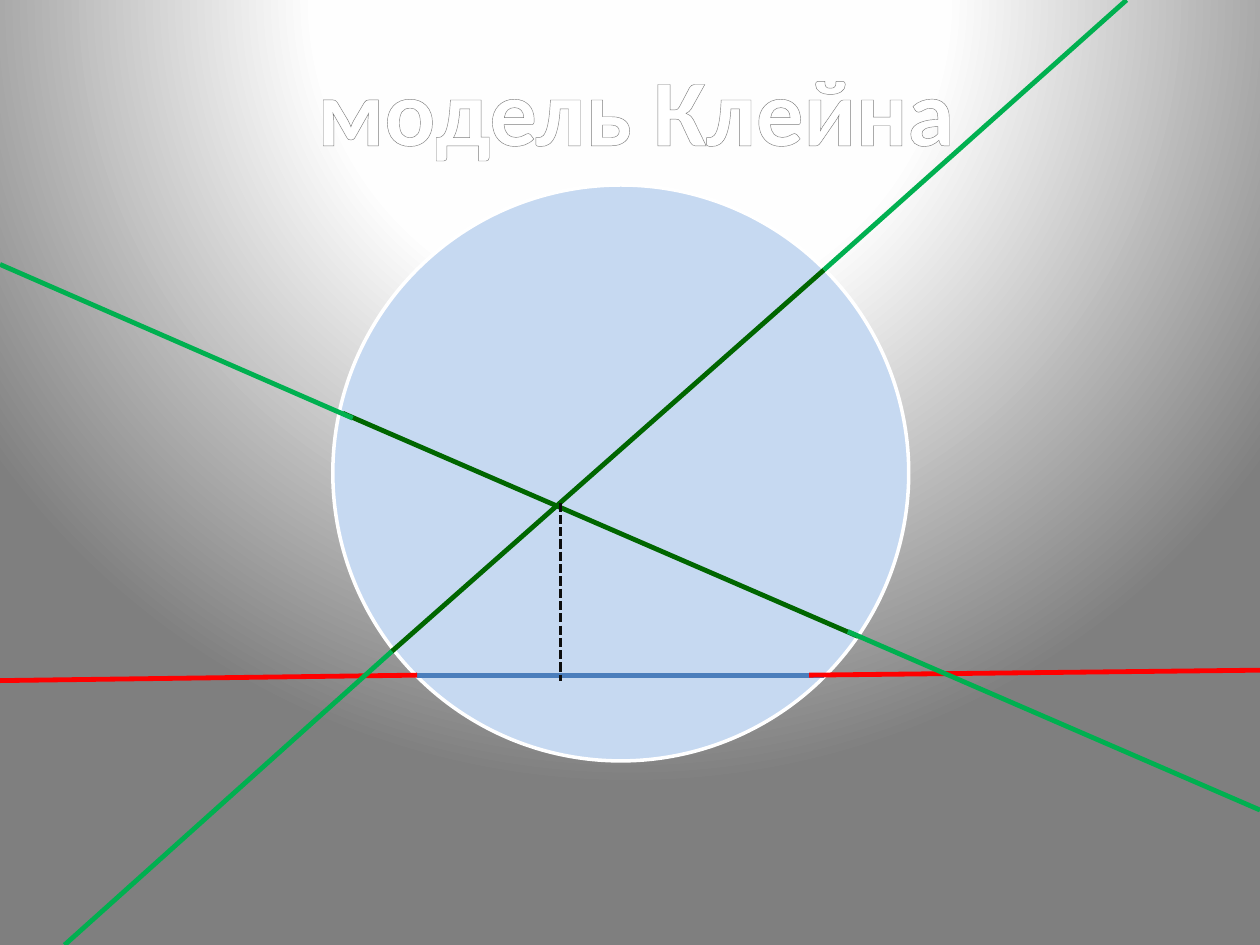
"""Build the slide on the Klein model: a disc, its chords and their extensions."""
from dataclasses import dataclass

from pptx import Presentation
from pptx import oxml
from pptx import util as u
from pptx.dml.color import RGBColor
from pptx.enum import dml, shapes, text
from pptx.oxml import ns
from pptx.slide import Slide

WHITE = RGBColor(0xFF, 0xFF, 0xFF)
NEAR_WHITE = RGBColor(0xFE, 0xFE, 0xFE)
GREY = RGBColor(0x7F, 0x7F, 0x7F)
OUTLINE_GREY = RGBColor(0x7D, 0x7D, 0x7D)
PALE_BLUE = RGBColor(0xC6, 0xD9, 0xF1)
BLUE = RGBColor(0x4B, 0x7E, 0xBC)
DARK_GREEN = RGBColor(0x00, 0x66, 0x00)
GREEN = RGBColor(0x00, 0xB0, 0x50)
RED = RGBColor(0xFF, 0x00, 0x00)
BLACK = RGBColor(0x0D, 0x0D, 0x0D)

Point = tuple[float, float]
Stops = list[tuple[int, RGBColor]]

WIDTH, HEIGHT = 25.4, 19.05
CHORD_LEFT, CHORD_RIGHT = (8.41, 13.61), (16.61, 13.61)
RISING_LOW, RISING_HIGH = (7.9, 13.13), (16.61, 5.44)


@dataclass(frozen=True)
class Segment:
    start: Point
    end: Point
    color: RGBColor
    width: float = 2.75
    dash: dml.MSO_LINE | None = None


SEGMENTS = [
    Segment(CHORD_LEFT, CHORD_RIGHT, BLUE),
    Segment(RISING_LOW, RISING_HIGH, DARK_GREEN),
    Segment((17.3, 12.83), (6.91, 8.33), DARK_GREEN),
    Segment(CHORD_LEFT, (0, 13.72), RED),
    Segment((WIDTH, 13.51), (16.31, 13.61), RED),
    Segment((7.11, 8.43), (0, 5.33), GREEN),
    Segment((WIDTH, 16.33), (17.09, 12.73), GREEN),
    Segment(RISING_HIGH, (22.71, 0), GREEN),
    Segment((1.3, HEIGHT), RISING_LOW, GREEN),
    Segment((11.3, 10.13), (11.3, 13.72), BLACK, 1.75, dml.MSO_LINE.SQUARE_DOT),
]


def gradient(stops: Stops, shade: str) -> oxml.xmlchemy.BaseOxmlElement:
    """Return a gradient fill element with the given stops and shading."""
    marks = "".join(
        f'<a:gs pos="{percent * 1000}"><a:srgbClr val="{color}"/></a:gs>'
        for percent, color in stops
    )
    return oxml.parse_xml(
        f'<a:gradFill {ns.nsdecls("a")} rotWithShape="1">'
        f"<a:gsLst>{marks}</a:gsLst>{shade}</a:gradFill>"
    )


def paint_background(page: Slide) -> None:
    """Fill the page with a glow centred above its top edge."""
    page.background.fill.solid()
    properties = page.element.xpath(".//p:bgPr")[0]
    glow = gradient(
        [(0, WHITE), (40, NEAR_WHITE), (100, GREY)],
        '<a:path path="circle">'
        '<a:fillToRect l="50000" t="-80000" r="50000" b="180000"/></a:path>',
    )
    properties.replace(properties[0], glow)


def draw_disc(page: Slide, left: float, top: float, size: float) -> None:
    """Draw the disc that bounds the model."""
    disc = page.shapes.add_shape(
        shapes.MSO_SHAPE.OVAL, u.Cm(left), u.Cm(top), u.Cm(size), u.Cm(size)
    )
    disc.shadow.inherit = False
    disc.fill.solid()
    disc.fill.fore_color.rgb = PALE_BLUE
    disc.line.color.rgb = WHITE
    disc.line.width = u.Pt(2)


def draw_segment(page: Slide, segment: Segment) -> None:
    """Draw one straight segment without a shadow."""
    ends = [u.Cm(value) for value in (*segment.start, *segment.end)]
    line = page.shapes.add_connector(shapes.MSO_CONNECTOR.STRAIGHT, *ends)
    line.line.color.rgb = segment.color
    line.line.width = u.Pt(segment.width)
    if segment.dash is not None:
        line.line.dash_style = segment.dash
    line.element.spPr.append(oxml.parse_xml(f'<a:effectLst {ns.nsdecls("a")}/>'))


def add_text(
    page: Slide,
    wording: str,
    *,
    place: tuple[float, float, float, float],
    size: float,
    font: str,
    stops: Stops,
    outline: RGBColor,
    outline_width: float,
) -> None:
    """Add a centred bold line of outlined text with a gradient fill."""
    box = page.shapes.add_textbox(*(u.Cm(value) for value in place))
    frame = box.text_frame
    frame.word_wrap = False
    frame.auto_size = text.MSO_AUTO_SIZE.SHAPE_TO_FIT_TEXT
    para = frame.paragraphs[0]
    para.alignment = text.PP_ALIGN.CENTER
    span = para.add_run()
    span.text = wording
    span.font.size = u.Pt(size)
    span.font.bold = True
    span.font.name = font
    properties = para.runs[0].font._element
    border = oxml.parse_xml(
        f'<a:ln {ns.nsdecls("a")} w="{int(u.Pt(outline_width))}"><a:solidFill>'
        f'<a:srgbClr val="{outline}"/></a:solidFill></a:ln>'
    )
    properties.insert(0, border)
    properties.insert(1, gradient(stops, '<a:lin ang="5400000" scaled="0"/>'))


def main() -> None:
    """Build and save the deck."""
    deck = Presentation()
    deck.slide_width, deck.slide_height = u.Cm(WIDTH), u.Cm(HEIGHT)
    page = deck.slides.add_slide(deck.slide_layouts[6])
    paint_background(page)
    draw_disc(page, left=6.71, top=3.73, size=11.61)
    for segment in SEGMENTS:
        draw_segment(page, segment)
    add_text(
        page,
        "модель Клейна",
        place=(6.1, 0.91, 13.44, 2.57),
        size=54,
        font="Calibri",
        stops=[(0, WHITE), (9, WHITE), (50, GREY), (79, WHITE), (100, WHITE)],
        outline=OUTLINE_GREY,
        outline_width=0.83,
    )
    deck.save("out.pptx")


if __name__ == "__main__":
    main()
